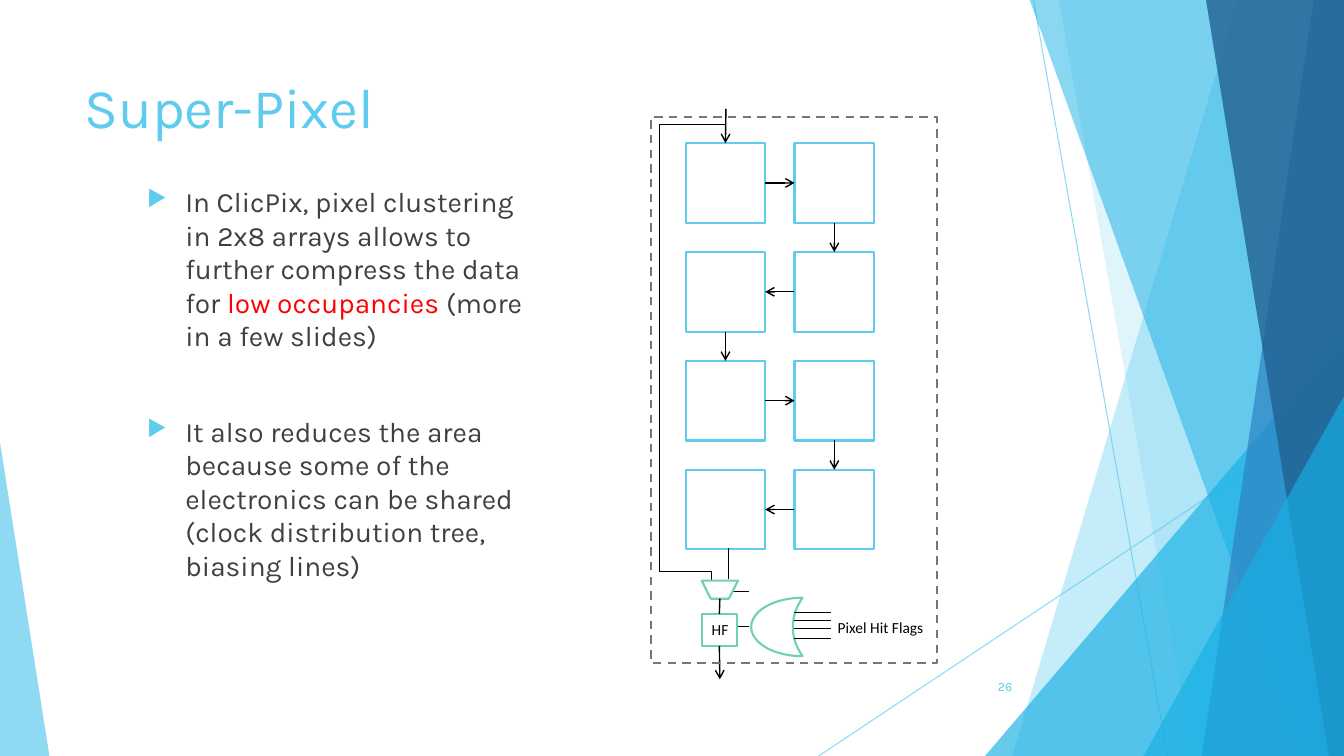
from lxml import etree
from pptx import Presentation
from pptx.dml.color import RGBColor
from pptx.enum.dml import MSO_LINE
from pptx.enum.shapes import MSO_CONNECTOR, MSO_SHAPE
from pptx.enum.text import MSO_ANCHOR, PP_ALIGN
from pptx.oxml.ns import qn
from pptx.util import Inches, Pt

STRAIGHT = MSO_CONNECTOR.STRAIGHT
RECTANGLE = MSO_SHAPE.RECTANGLE
TRIANGLE = MSO_SHAPE.ISOSCELES_TRIANGLE
MOON = MSO_SHAPE.MOON
DASH = MSO_LINE.DASH
LEFT, RIGHT = PP_ALIGN.LEFT, PP_ALIGN.RIGHT
TOP, MIDDLE = MSO_ANCHOR.TOP, MSO_ANCHOR.MIDDLE
SIDE_TOP, SIDE_LEFT, SIDE_BOTTOM, SIDE_RIGHT = range(4)
WIDTH, HEIGHT = 13.33, 7.5
COLORS = {
    "sky": "5FCBEF", "cyan": "17B0E4", "blue": "2E83C3", "navy": "226292",
    "green": "6ED2AA", "grey": "767676", "text": "404040", "red": "FF0000",
    "black": "000000", "white": "FFFFFF",
}


def color(name):
    """Return the named colour."""
    return RGBColor.from_string(COLORS[name])


def fade(shape, opacity):
    """Give the shape's colour an opacity in percent."""
    tone = next(shape._element.iter(qn("a:srgbClr")))
    etree.SubElement(tone, qn("a:alpha"), val=str(opacity * 1000))


def paint(shape, fill=None, outline=None):
    """Set fill and outline and remove the shadow."""
    shape.shadow.inherit = False
    if fill:
        shape.fill.solid()
        shape.fill.fore_color.rgb = color(fill)
    else:
        shape.fill.background()
    if outline:
        shape.line.color.rgb = color(outline)
        shape.line.width = Pt(1.5)
    else:
        shape.line.fill.background()


def add_preset(page, kind, bounds, fill=None, outline=None, adjust=None):
    """Add a preset shape."""
    shape = page.shapes.add_shape(kind, *map(Inches, bounds))
    paint(shape, fill, outline)
    if adjust is not None:
        shape.adjustments[0] = adjust
    return shape


def add_outline(page, points, fill, outline=None):
    """Add a closed polygon."""
    corners = [(Inches(x), Inches(y)) for x, y in points]
    builder = page.shapes.build_freeform(*corners[0])
    builder.add_line_segments(corners[1:], close=True)
    shape = builder.convert_to_shape()
    paint(shape, fill, outline)
    return shape


def add_line(page, start, end, width=0.75, tone="black", arrow=False):
    """Add a straight line, with an arrowhead at its end if wanted."""
    line = page.shapes.add_connector(STRAIGHT, *map(Inches, start + end))
    line.line.color.rgb = color(tone)
    line.line.width = Pt(width)
    properties = line._element.spPr
    if arrow:
        etree.SubElement(properties.find(qn("a:ln")), qn("a:tailEnd"), type="arrow")
    etree.SubElement(properties, qn("a:effectLst"))
    return line


def style(para, size, font, tone):
    """Set the font of a paragraph."""
    para.font.size = Pt(size)
    para.font.name = font
    para.font.color.rgb = color(tone)


def add_box(page, bounds, anchor=TOP):
    """Add an empty wrapping text box and return its frame."""
    frame = page.shapes.add_textbox(*map(Inches, bounds)).text_frame
    frame.word_wrap = True
    frame.vertical_anchor = anchor
    return frame


def add_label(page, bounds, text, size, font, tone, align=LEFT, anchor=TOP):
    """Add a one-paragraph text box."""
    para = add_box(page, bounds, anchor).paragraphs[0]
    para.text = text
    para.alignment = align
    style(para, size, font, tone)


def add_bullets(page, bounds, items):
    """Add bulleted paragraphs made of (text, colour) spans."""
    frame = add_box(page, bounds)
    for index, spans in enumerate(items):
        para = frame.add_paragraph() if index else frame.paragraphs[0]
        properties = para._p.get_or_add_pPr()
        properties.set("marL", str(Inches(0.38)))
        properties.set("indent", str(-Inches(0.38)))
        bullet_color = etree.SubElement(properties, qn("a:buClr"))
        etree.SubElement(bullet_color, qn("a:srgbClr"), val=COLORS["sky"])
        etree.SubElement(properties, qn("a:buSzPct"), val="80000")
        etree.SubElement(properties, qn("a:buChar"), char="▶")
        if index:
            para.space_before = Pt(44)
        style(para, 20, "Karla", "text")
        for text, tone in spans:
            span = para.add_run()
            span.text = text
            if tone != "text":
                span.font.color.rgb = color(tone)


def add_panel(page, top, bottom, tone, opacity):
    """Add a translucent panel from a slanted left edge to the slide's right edge."""
    points = [(top, -0.01), (WIDTH, -0.01), (WIDTH, HEIGHT), (bottom, HEIGHT)]
    fade(add_outline(page, points, tone), opacity)


def add_wedge(page, bounds, tone, opacity, apex):
    """Add a translucent right triangle."""
    fade(add_preset(page, TRIANGLE, bounds, tone, adjust=apex), opacity)


def add_backdrop(page):
    """Draw the faceted decoration."""
    for start, end in (((10.25, 0), (11.58, HEIGHT)), ((WIDTH, 4.03), (8.12, HEIGHT))):
        fade(add_line(page, start, end, tone="sky"), 70)
    add_panel(page, 12.28, 10.04, "sky", 36)
    add_panel(page, 10.5, 11.83, "sky", 20)
    add_wedge(page, (9.77, 3.33, 3.56, 4.17), "cyan", 66, 1)
    add_panel(page, 10.21, 12.91, "cyan", 50)
    add_panel(page, 13.03, 11.92, "blue", 70)
    add_panel(page, 11.96, 13.18, "navy", 80)
    add_wedge(page, (11.34, 3.93, 1.99, 3.57), "cyan", 66, 1)
    add_wedge(page, (0, 4.39, 0.49, 3.11), "sky", 70, 0)


def add_pixel_chain(page):
    """Draw the pixels in snake order, join them and feed the first."""
    pixels = []
    for row in range(4):
        for column in ((0, 1), (1, 0))[row % 2]:
            bounds = (6.8 + 1.08 * column, 1.42 + 1.08 * row, 0.79, 0.79)
            pixels.append(add_preset(page, RECTANGLE, bounds, "white", "sky"))
    for index, (source, target) in enumerate(zip(pixels, pixels[1:])):
        if index % 2:
            sides = SIDE_BOTTOM, SIDE_TOP
        elif index % 4 == 0:
            sides = SIDE_RIGHT, SIDE_LEFT
        else:
            sides = SIDE_LEFT, SIDE_RIGHT
        link = add_line(page, (0, 0), (1, 1), 1, arrow=True)
        link.begin_connect(source, sides[0])
        link.end_connect(target, sides[1])
    feed = add_line(page, (7.2, 1.08), (7.2, 1.42), 1, arrow=True)
    feed.end_connect(pixels[0], SIDE_TOP)


def add_readout(page):
    """Draw the multiplexer, the hit flag cell, the OR gate and their wires."""
    wires = [
        ((7.43, 5.87), (7.07, 5.87)), ((7.43, 6.22), (7.07, 6.22)),
        ((7.23, 5.74), (7.23, 5.44)), ((7.06, 5.76), (7.06, 5.67)),
        ((7.06, 5.67), (6.54, 5.67)), ((6.54, 5.67), (6.54, 1.24)),
        ((6.54, 1.24), (7.2, 1.24)),
    ]
    for start, end in wires:
        add_line(page, start, end)
    add_outline(page, [(7.32, 5.76), (7.23, 5.94), (7.05, 5.94), (6.96, 5.76)],
                "white", "green")
    hit_flag = add_preset(page, RECTANGLE, (6.96, 6.09, 0.35, 0.32), "white", "green")
    add_label(page, (6.96, 6.1, 0.78, 0.31), "HF", 11, "Calibri", "black")
    add_line(page, (7.14, 5.94), (7.14, 6.09), 1).end_connect(hit_flag, SIDE_TOP)
    output = add_line(page, (7.14, 6.41), (7.14, 6.74), 1, arrow=True)
    output.begin_connect(hit_flag, SIDE_BOTTOM)
    add_preset(page, MOON, (7.45, 5.93, 0.51, 0.58), outline="green", adjust=0.81)
    for y in (6.08, 6.16, 6.24, 6.33):
        add_line(page, (8.24, y), (7.88, y))
    add_label(page, (8.21, 6.08, 1.25, 0.31), "Pixel Hit Flags", 11, "Calibri", "black")


def main():
    """Build the slide."""
    deck = Presentation()
    deck.slide_width, deck.slide_height = Inches(WIDTH), Inches(HEIGHT)
    page = deck.slides.add_slide(deck.slide_layouts[6])
    add_backdrop(page)
    add_label(page, (0.74, 0.67, 9.4, 1.44), "Super-Pixel", 40, "Karla", "sky")
    add_pixel_chain(page)
    add_readout(page)
    add_bullets(page, (1.36, 1.78, 4.05, 4.32), [
        [("In ClicPix, pixel clustering in 2x8 arrays allows to further compress "
          "the data for ", "text"),
         ("low occupancies ", "red"), ("(more in a few slides)", "text")],
        [("It also reduces the area because some of the electronics can be shared "
          "(clock distribution tree, biasing lines)", "text")],
    ])
    border = add_preset(page, RECTANGLE, (6.46, 1.16, 2.83, 5.42), outline="grey")
    border.line.dash_style = DASH
    add_label(page, (9.39, 6.61, 0.75, 0.4), "26", 9, "Karla", "sky", RIGHT, MIDDLE)
    deck.save("out.pptx")


if __name__ == "__main__":
    main()
